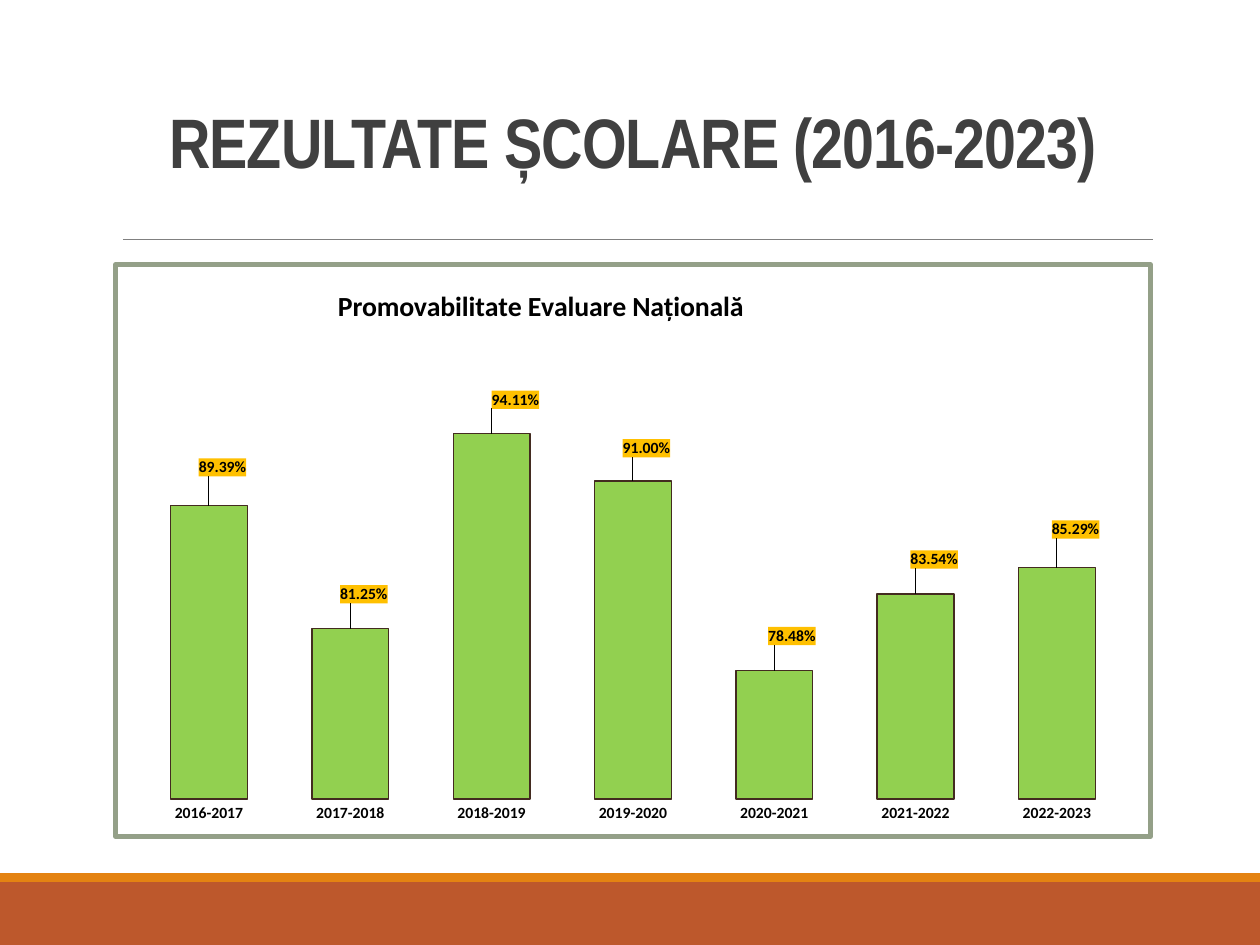
import pptx
import pptx.chart.data
import pptx.dml.color
import pptx.enum.chart
import pptx.enum.shapes
import pptx.enum.text
import pptx.oxml
import pptx.oxml.ns
import pptx.util

RGB = pptx.dml.color.RGBColor
WHITE = RGB(0xFF, 0xFF, 0xFF)
BLACK = RGB(0, 0, 0)
TITLE_GREY = RGB(0x40, 0x40, 0x40)
RULE_GREY = RGB(0x80, 0x80, 0x80)
RUST = RGB(0xBD, 0x58, 0x2C)
ORANGE = RGB(0xE4, 0x83, 0x12)
SAGE = RGB(0x94, 0xA0, 0x88)
GREEN = RGB(0x92, 0xD0, 0x50)
BROWN = RGB(0x43, 0x2B, 0x20)
AMBER = RGB(0xFF, 0xC0, 0x00)

PX_PER_INCH = 126
PERCENT = "0.00%"
# school year, pass rate, label shift in px
RESULTS = [
    ("2016-2017", 0.8939, (14, -24)),
    ("2017-2018", 0.8125, (14, -21)),
    ("2018-2019", 0.9411, (24, -20)),
    ("2019-2020", 0.91, (14, -19)),
    ("2020-2021", 0.7848, (18, -21)),
    ("2021-2022", 0.8354, (19, -21)),
    ("2022-2023", 0.8529, (19, -24)),
]


def emu(px):
    return pptx.util.Emu(round(px * 914400 / PX_PER_INCH))


def xml(tag, body):
    """Parse one chart element with the c and a namespaces declared."""
    names = pptx.oxml.ns.nsdecls("c", "a")
    return pptx.oxml.parse_xml(f"<{tag} {names}>{body}</{tag}>")


def solid(color):
    return f'<a:solidFill><a:srgbClr val="{color}"/></a:solidFill>'


def set_layout(parent, index, **values):
    """Give a chart part a manual layout, as fractions of the chart."""
    for old in parent.findall(pptx.oxml.ns.qn("c:layout")):
        parent.remove(old)
    body = "".join(f'<c:{key} val="{value}"/>' for key, value in values.items())
    parent.insert(index, xml("c:layout", f"<c:manualLayout>{body}</c:manualLayout>"))


def set_font(font, size, color=BLACK, name="Calibri", bold=True):
    font.size = pptx.util.Pt(size)
    font.name = name
    font.bold = bold
    font.color.rgb = color


def write(frame, text, size, spacing=None, tracking=None, align=None, **style):
    para = frame.paragraphs[0]
    para.alignment = align
    para.line_spacing = spacing
    span = para.add_run()
    span.text = text
    set_font(span.font, size, **style)
    if tracking is not None:
        span.font._element.set("spc", str(tracking))


class Slide:
    def __init__(self, page):
        self.page = page

    def band(self, left, top, width, height, color):
        shape = self.page.shapes.add_shape(
            pptx.enum.shapes.MSO_SHAPE.RECTANGLE,
            emu(left), emu(top), emu(width), emu(height))
        shape.shadow.inherit = False
        shape.fill.solid()
        shape.fill.fore_color.rgb = color
        shape.line.fill.background()

    def rule(self, left, right, y, color, weight):
        line = self.page.shapes.add_connector(
            pptx.enum.shapes.MSO_CONNECTOR.STRAIGHT,
            emu(left), emu(y), emu(right), emu(y))
        line.line.color.rgb = color
        line.line.width = pptx.util.Pt(weight)
        line._element.spPr.append(xml("a:effectLst", ""))

    def heading(self, left, top, width, height, text, size, **style):
        box = self.page.shapes.add_textbox(emu(left), emu(top), emu(width), emu(height))
        box.text_frame.word_wrap = True
        box.text_frame.vertical_anchor = pptx.enum.text.MSO_ANCHOR.BOTTOM
        write(box.text_frame, text, size, align=pptx.enum.text.PP_ALIGN.CENTER, **style)

    def column_chart(self, left, top, width, height, title, results):
        data = pptx.chart.data.CategoryChartData(number_format=PERCENT)
        data.categories = [year for year, _, _ in results]
        data.add_series("Series 1", [rate for _, rate, _ in results])
        chart = self.page.shapes.add_chart(
            pptx.enum.chart.XL_CHART_TYPE.COLUMN_CLUSTERED,
            emu(left), emu(top), emu(width), emu(height), data).chart
        set_font(chart.font, 10, bold=False)
        chart.has_legend = False
        self.frame_chart(chart)

        chart.has_title = True
        write(chart.chart_title.text_frame, title, 16)
        set_layout(chart.chart_title._element, 1, xMode="edge", yMode="edge",
                   x=0.21, y=0.03)
        set_layout(chart.element.chart.plotArea, 0, layoutTarget="inner",
                   xMode="edge", yMode="edge", x=0.022, y=0.14, w=0.956, h=0.795)
        self.style_axes(chart)
        self.style_columns(chart.plots[0])
        shifts = [(dx / width, dy / height) for _, _, (dx, dy) in results]
        self.label_columns(chart.plots[0].series[0], shifts)

    def frame_chart(self, chart):
        border = f'<a:ln w="{pptx.util.Pt(3)}">{solid(SAGE)}</a:ln>'
        text_style = chart.element.find(pptx.oxml.ns.qn("c:txPr"))
        text_style.addprevious(xml("c:spPr", solid(WHITE) + border))

    def style_axes(self, chart):
        years, rates = chart.category_axis, chart.value_axis
        years.major_tick_mark = pptx.enum.chart.XL_TICK_MARK.NONE
        years.format.line.fill.background()
        set_font(years.tick_labels.font, 9)
        rates.visible = False
        rates.has_major_gridlines = False
        rates.minimum_scale, rates.maximum_scale = 0.7, 1

    def style_columns(self, plot):
        plot.gap_width = 84
        plot.vary_by_categories = False
        look = plot.series[0].format
        look.fill.solid()
        look.fill.fore_color.rgb = GREEN
        look.line.color.rgb = BROWN
        look.line.width = pptx.util.Pt(0.75)

    def label_columns(self, series, shifts):
        labels = series.data_labels
        labels.show_value = True
        labels.number_format = PERCENT
        labels.number_format_is_linked = False
        set_font(labels.font, 9)
        for index in range(len(shifts)):
            label = series.points[index].data_label
            set_font(label.font, 9)
            label.position = pptx.enum.chart.XL_LABEL_POSITION.OUTSIDE_END
        for element, (x, y) in zip(series._element.xpath(".//c:dLbl"), shifts):
            for old in element.findall(pptx.oxml.ns.qn("c:spPr")):
                element.remove(old)
            text_style = element.find(pptx.oxml.ns.qn("c:txPr"))
            text_style.addprevious(xml("c:spPr", solid(AMBER)))
            set_layout(element, 1, x=round(x, 3), y=round(y, 3))


def main():
    deck = pptx.Presentation()
    deck.slide_width, deck.slide_height = emu(1260), emu(945)
    slide = Slide(deck.slides.add_slide(deck.slide_layouts[6]))
    slide.band(0, 882, 1260, 63, RUST)
    slide.band(0, 873, 1260, 9, ORANGE)
    slide.rule(123, 1153, 239, RULE_GREY, 0.5)
    slide.heading(113, 53, 1040, 136, "REZULTATE ȘCOLARE (2016-2023)", 40,
                  name="Arial Narrow", color=TITLE_GREY, spacing=0.85, tracking=-50)
    slide.column_chart(113, 262, 1040, 577, "Promovabilitate Evaluare Națională", RESULTS)
    deck.save("out.pptx")


if __name__ == "__main__":
    main()
